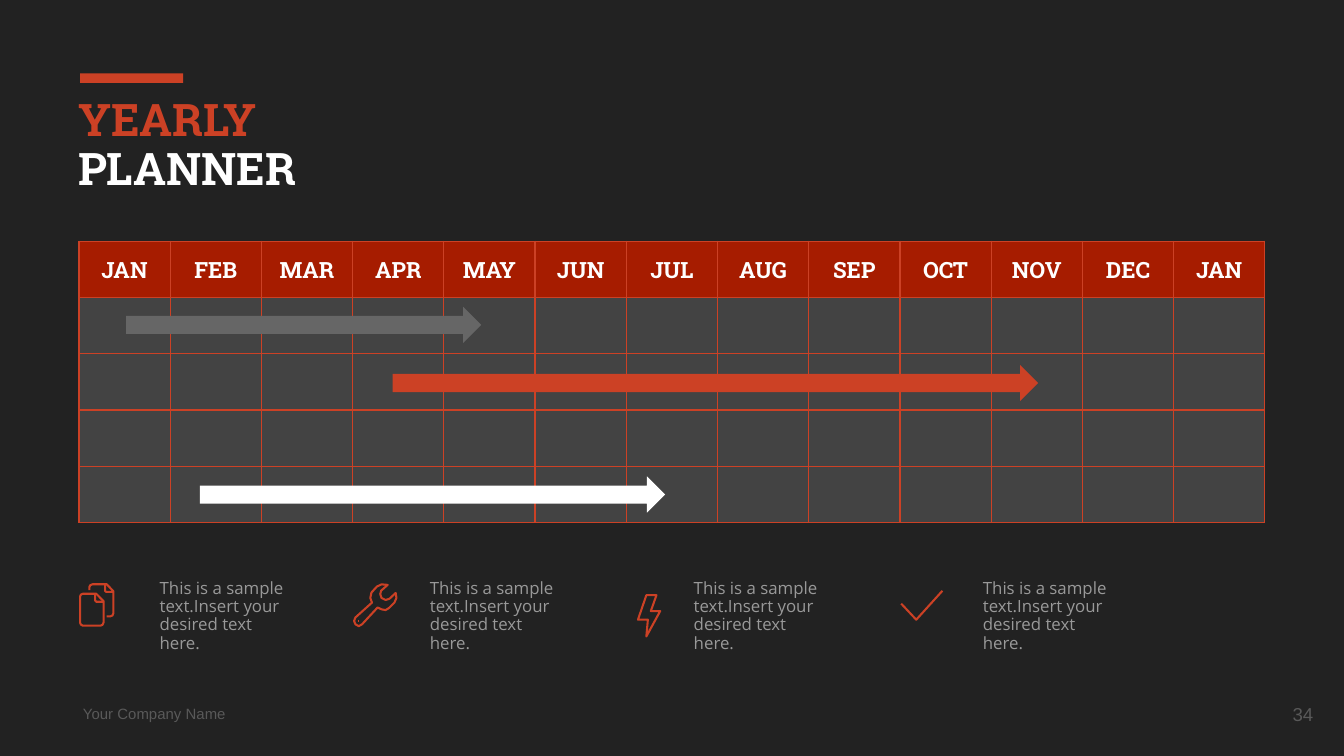
from lxml.etree import SubElement
from pptx import Presentation
from pptx.dml.color import RGBColor
from pptx.enum.shapes import MSO_SHAPE as Preset
from pptx.enum.text import MSO_ANCHOR as Anchor, MSO_AUTO_SIZE as AutoSize, PP_ALIGN as Align
from pptx.oxml.ns import qn
from pptx.util import Pt

ACCENT, WHITE, FOOTER = "CC4125", "FFFFFF", "595959"
color = RGBColor.from_string


def write(frame, text, size, font, colors, bold=False, align=Align.LEFT,
          anchor=Anchor.MIDDLE, spacing=1.0, inset=7.2):
    """Fill a text frame with one paragraph per line, coloured in turn."""
    frame.word_wrap = True
    frame.vertical_anchor = anchor
    frame.margin_left = frame.margin_right = Pt(7.2)
    frame.margin_top = frame.margin_bottom = Pt(inset)
    frame.text = text
    for para, hex_color in zip(frame.paragraphs, colors):
        para.alignment, para.line_spacing = align, spacing
        span = para.runs[0]
        span.font.size, span.font.name, span.font.bold = Pt(size), font, bold
        span.font.color.rgb = color(hex_color)


deck = Presentation()
deck.slide_width, deck.slide_height = Pt(720), Pt(405)
page = deck.slides.add_slide(deck.slide_layouts[5])
page.background.fill.solid()
page.background.fill.fore_color.rgb = color("222222")

# Title
title = page.shapes.title
title.left, title.top, title.width, title.height = Pt(34.6), Pt(45.4), Pt(324.7), Pt(83.5)
write(title.text_frame, "YEARLY\nPLANNER", 24, "Roboto Slab", [ACCENT, WHITE],
      bold=True, anchor=Anchor.TOP, spacing=0.9)
title.text_frame.auto_size = AutoSize.NONE

# Calendar grid
months = "JAN FEB MAR APR MAY JUN JUL AUG SEP OCT NOV DEC JAN".split()
row_count, column_width, row_height = 5, 48.88, 30.15
grid = page.shapes.add_table(row_count, len(months), Pt(42.3), Pt(129.3),
                             Pt(column_width * len(months)), Pt(row_height * row_count)).table
grid.first_row = grid.horz_banding = False
for column in grid.columns:
    column.width = Pt(column_width)
for row_index, row in enumerate(grid.rows):
    row.height = Pt(row_height)
    for month, cell in zip(months, row.cells):
        cell.fill.solid()
        cell.fill.fore_color.rgb = color("434343" if row_index else "A61C00")
        if row_index == 0:
            write(cell.text_frame, month, 12, "Roboto Slab", [WHITE],
                  bold=True, align=Align.CENTER, inset=3.6)
            cell.vertical_anchor = Anchor.MIDDLE
            cell.margin_left = cell.margin_right = Pt(0)
        properties = cell._tc.get_or_add_tcPr()
        for order, side in enumerate(("lnL", "lnR", "lnT", "lnB")):
            border = SubElement(properties, qn(f"a:{side}"), w=str(Pt(0.75)))
            border_fill = SubElement(border, qn("a:solidFill"))
            SubElement(border_fill, qn("a:srgbClr"), val=ACCENT)
            properties.insert(order, border)

# Accent bar and schedule arrows
for preset, left, top, width, height, fill in (
    (Preset.RECTANGLE, 42.9, 39.3, 55.2, 5.2, ACCENT),
    (Preset.RIGHT_ARROW, 67.6, 164.4, 190.2, 19.4, "666666"),
    (Preset.RIGHT_ARROW, 210.4, 195.5, 345.8, 19.4, ACCENT),
    (Preset.RIGHT_ARROW, 107.1, 255.3, 249.2, 19.4, WHITE),
):
    shape = page.shapes.add_shape(preset, Pt(left), Pt(top), Pt(width), Pt(height))
    shape.shadow.inherit = False
    shape.fill.solid()
    shape.fill.fore_color.rgb = color(fill)
    shape.line.fill.background()

# Line icons: strokes in points from each icon's top left corner
pages_icon = [
    [(2, 5.6), (9.2, 5.6), (13.1, 9.6), (13.1, 21), (12.6, 22.2), (11.5, 22.7), (2, 22.7),
     (0.9, 22.1), (0.5, 21), (0.5, 7.2), (0.9, 6.1), (2, 5.6)],
    [(8.6, 5.6), (8.6, 9.2), (9.2, 9.9), (13.1, 9.9)],
    [(5.5, 3.6), (5.5, 2), (6, 1), (7.2, 0.5), (14.8, 0.5), (18.4, 4.3), (18.4, 16),
     (17.9, 17.2), (16.8, 17.7), (14.8, 17.7)],
    [(13.9, 0.5), (13.9, 4.1), (14.5, 4.6), (18.4, 4.6)],
]
wrench_icon = [
    [(18.4, 0.9), (14.9, 4), (14.4, 5.8), (15.1, 7.9), (17.3, 9), (19.4, 8.3), (22.7, 5.2),
     (23.1, 7.9), (22, 10.4), (19.1, 13.3), (17.3, 14.4), (15.1, 14), (13, 13), (4.7, 22),
     (2.9, 23), (1.1, 22), (0.4, 20.2), (1.1, 18.4), (10, 10.4), (9.1, 7.9), (9.7, 5),
     (12.6, 1.8), (15.1, 0.6), (18.4, 0.9)],
    [(2.7, 20.2), (3.2, 20.2)],
]
bolt_icon = [[(5, 0.5), (10.4, 0.5), (7.4, 9), (12.4, 9), (5, 22.6), (5.8, 13.6),
              (0.5, 13.6), (5, 0.5)]]
check_icon = [[(0.5, 7.4), (8.6, 16), (22.6, 0.5)]]

for strokes, icon_left, icon_top, text_left in (
    (pages_icon, 42.4, 312.5, 78.5),
    (wrench_icon, 189.3, 312.5, 223.2),
    (bolt_icon, 341.3, 318.4, 364.6),
    (check_icon, 482.3, 316, 519.5),
):
    builder = page.shapes.build_freeform(*map(Pt, strokes[0][0]))
    for stroke in strokes:
        start, *rest = [(Pt(x), Pt(y)) for x, y in stroke]
        builder.move_to(*start)
        builder.add_line_segments(rest, close=False)
    icon = builder.convert_to_shape(Pt(icon_left), Pt(icon_top))
    icon.shadow.inherit = False
    icon.fill.background()
    icon.line.color.rgb = color(ACCENT)
    icon.line.width = Pt(1.1)
    box = page.shapes.add_textbox(Pt(text_left), Pt(311.8), Pt(84.2), Pt(36.7))
    write(box.text_frame, "This is a sample text.Insert your desired text here.",
          9, "Open Sans", ["999999"], spacing=0.9)

# Footer
for text, left, top, width, height, size, align in (
    ("Your Company Name", 37.4, 373, 120.2, 18.7, 8, Align.LEFT),
    ("34", 667.4, 367.2, 43.2, 31, 10, Align.RIGHT),
):
    box = page.shapes.add_textbox(Pt(left), Pt(top), Pt(width), Pt(height))
    write(box.text_frame, text, size, "Arial", [FOOTER], align=align)

deck.save("out.pptx")
